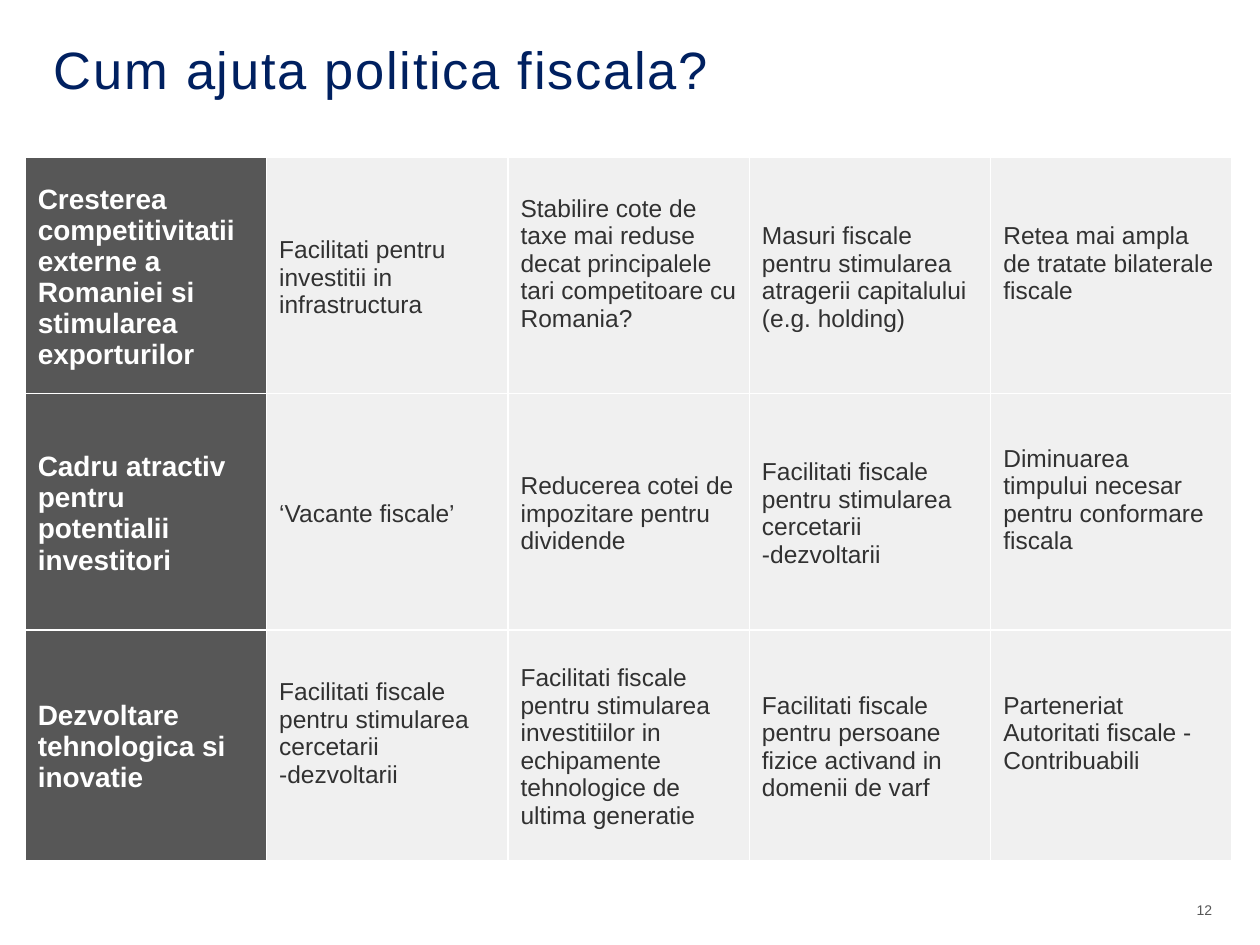
from dataclasses import dataclass

from lxml import etree
from pptx import Presentation
from pptx.dml.color import RGBColor
from pptx.enum import text as tx
from pptx.oxml import ns
from pptx.util import Inches, Pt


@dataclass(frozen=True)
class Theme:
    font: str = "Arial"
    navy: str = "002060"
    dark: str = "575757"
    pale: str = "F0F0F0"
    ink: str = "313131"
    white: str = "FFFFFF"
    title: int = 30
    head: int = 16
    body: int = 14
    small: int = 8


@dataclass(frozen=True)
class Item:
    text: str
    lift: bool = False  # sits half a line above the middle


@dataclass(frozen=True)
class Grid:
    top: float
    tall: float
    rows: list[list[Item]]


T = Theme()
LEFT, WIDE, COLS = 0.2, 9.58, 5
LINE = 0.22  # height of one line of body text

# Table content: the first item of a row is its heading
RESEARCH = "Facilitati fiscale pentru stimularea cercetarii -dezvoltarii"
GRIDS = [
    Grid(1.25, 1.875, [
        [Item("Cresterea competitivitatii externe a Romaniei si stimularea exporturilor"),
         Item("Facilitati pentru investitii in infrastructura"),
         Item("Stabilire cote de taxe mai reduse decat principalele tari competitoare cu Romania?", True),
         Item("Masuri fiscale pentru stimularea atragerii capitalului (e.g. holding)"),
         Item("Retea mai ampla de tratate bilaterale fiscale", True)],
        [Item("Cadru atractiv pentru potentialii investitori"),
         Item("‘Vacante fiscale’"),
         Item("Reducerea cotei de impozitare pentru dividende"),
         Item(RESEARCH),
         Item("Diminuarea timpului necesar pentru conformare fiscala", True)],
    ]),
    Grid(5, 1.83, [
        [Item("Dezvoltare tehnologica si inovatie"),
         Item(RESEARCH, True),
         Item("Facilitati fiscale pentru stimularea investitiilor in echipamente "
              "tehnologice de ultima generatie"),
         Item("Facilitati fiscale pentru persoane fizice activand in domenii de varf"),
         Item("Parteneriat Autoritati fiscale - Contribuabili", True)],
    ]),
]


def style(para, size: int, color: str, bold: bool = False) -> None:
    font = para.font
    font.name, font.size, font.bold = T.font, Pt(size), bold
    font.color.rgb = RGBColor.from_string(color)


def label(slide, box: tuple, words: str, size: int, color: str):
    shape = slide.shapes.add_textbox(*map(Inches, box))
    frame = shape.text_frame
    frame.word_wrap = True
    frame.text = words
    style(frame.paragraphs[0], size, color)
    return frame


def edge(cell) -> None:
    """Give all four sides a thin white border."""
    props = cell._tc.get_or_add_tcPr()
    for n, side in enumerate(("lnL", "lnR", "lnT", "lnB")):
        line = etree.Element(ns.qn(f"a:{side}"), w=str(Pt(1)))
        fill = etree.SubElement(line, ns.qn("a:solidFill"))
        etree.SubElement(fill, ns.qn("a:srgbClr"), val=T.white)
        props.insert(n, line)


def fill(cell, item: Item, head: bool) -> None:
    cell.text = item.text
    cell.vertical_anchor = tx.MSO_ANCHOR.MIDDLE
    cell.margin_left = cell.margin_right = Inches(0.1)
    cell.margin_top = Inches(0.08)
    cell.margin_bottom = Inches(0.05 + LINE * item.lift)
    cell.fill.solid()
    cell.fill.fore_color.rgb = RGBColor.from_string(T.dark if head else T.pale)
    size, color = (T.head, T.white) if head else (T.body, T.ink)
    style(cell.text_frame.paragraphs[0], size, color, head)
    edge(cell)


def draw(slide, grid: Grid) -> None:
    count = len(grid.rows)
    table = slide.shapes.add_table(
        count, COLS, Inches(LEFT), Inches(grid.top),
        Inches(WIDE), Inches(grid.tall * count)).table
    table.first_row = table.horz_banding = False
    table.first_col = True
    for r, row in enumerate(grid.rows):
        for c, item in enumerate(row):
            fill(table.cell(r, c), item, c == 0)


def main() -> None:
    deck = Presentation()
    deck.slide_width, deck.slide_height = Inches(10), Inches(7.5)
    slide = deck.slides.add_slide(deck.slide_layouts[6])

    # Title
    frame = label(slide, (0.33, 0.33, 9.08, 0.5),
                  "Cum ajuta politica fiscala?", T.title, T.navy)
    frame.vertical_anchor = tx.MSO_ANCHOR.BOTTOM
    frame.margin_bottom = Inches(0.04)
    para = frame.paragraphs[0]
    para.line_spacing = 0.8
    para.runs[0]._r.get_or_add_rPr().set("spc", "100")

    # Tables
    for grid in GRIDS:
        draw(slide, grid)

    # Page number
    frame = label(slide, (8.75, 7.08, 0.87, 0.28), "12", T.small, T.dark)
    frame.vertical_anchor = tx.MSO_ANCHOR.MIDDLE
    frame.margin_left = frame.margin_right = 0
    frame.margin_top = frame.margin_bottom = 0
    frame.paragraphs[0].alignment = tx.PP_ALIGN.RIGHT

    deck.save("out.pptx")


if __name__ == "__main__":
    main()
